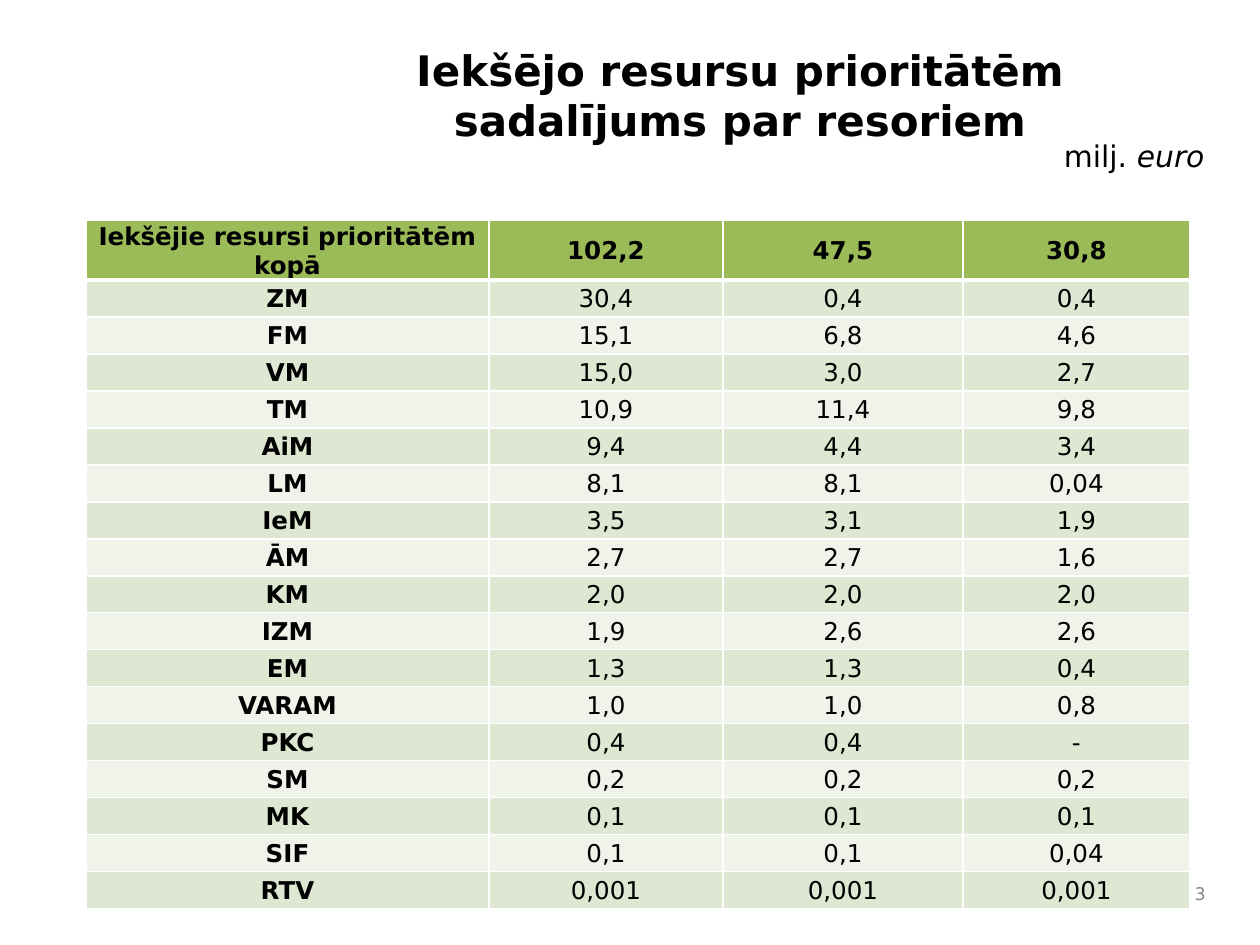
from lxml import etree
from pptx import Presentation
from pptx import util as u
from pptx.dml import color
from pptx.enum import text
from pptx.oxml import ns

PX = 914400 // 126
FONT = "DejaVu Sans"
COLUMN_WIDTHS = [403, 234, 240, 227]
HEADER_HEIGHT, ROW_HEIGHT = 49, 37
HEADER = ["Iekšējie resursi prioritātēm kopā", "102,2", "47,5", "30,8"]
MINISTRIES = [
    ["ZM", "30,4", "0,4", "0,4"],
    ["FM", "15,1", "6,8", "4,6"],
    ["VM", "15,0", "3,0", "2,7"],
    ["TM", "10,9", "11,4", "9,8"],
    ["AiM", "9,4", "4,4", "3,4"],
    ["LM", "8,1", "8,1", "0,04"],
    ["IeM", "3,5", "3,1", "1,9"],
    ["ĀM", "2,7", "2,7", "1,6"],
    ["KM", "2,0", "2,0", "2,0"],
    ["IZM", "1,9", "2,6", "2,6"],
    ["EM", "1,3", "1,3", "0,4"],
    ["VARAM", "1,0", "1,0", "0,8"],
    ["PKC", "0,4", "0,4", "-"],
    ["SM", "0,2", "0,2", "0,2"],
    ["MK", "0,1", "0,1", "0,1"],
    ["SIF", "0,1", "0,1", "0,04"],
    ["RTV", "0,001", "0,001", "0,001"],
]


def px(*lengths):
    return [length * PX for length in lengths]


def rgb(value):
    return color.RGBColor.from_string(value)


def apply(target, **values):
    for name, value in values.items():
        setattr(target, name, value)


def write(frame, runs, size, alignment, shade="000000"):
    paragraph = frame.paragraphs[0]
    paragraph.alignment = alignment
    for words, style in runs:
        run = paragraph.add_run()
        run.text = words
        apply(run.font, name=FONT, size=u.Pt(size), **style)
        run.font.color.rgb = rgb(shade)


def add_title(slide, box):
    title = slide.shapes.title
    apply(title, **dict(zip(("left", "top", "width", "height"), px(*box))))
    apply(title.text_frame, word_wrap=True, auto_size=text.MSO_AUTO_SIZE.NONE,
          vertical_anchor=text.MSO_ANCHOR.TOP)
    write(title.text_frame,
          [("Iekšējo resursu prioritātēm sadalījums par resoriem", {"bold": True})],
          24, text.PP_ALIGN.CENTER)


def add_label(slide, box, runs, size, anchor, shade="000000"):
    frame = slide.shapes.add_textbox(*px(*box)).text_frame
    apply(frame, word_wrap=True, vertical_anchor=anchor)
    write(frame, runs, size, text.PP_ALIGN.RIGHT, shade)


def add_borders(cell, widths):
    properties = cell._tc.get_or_add_tcPr()
    for position, (side, points) in enumerate(widths.items()):
        line = etree.Element(ns.qn(f"a:ln{side}"), w=str(u.Pt(points)))
        fill = etree.SubElement(line, ns.qn("a:solidFill"))
        etree.SubElement(fill, ns.qn("a:srgbClr"), val="FFFFFF")
        properties.insert(position, line)


def fill_cell(cell, words, row, column):
    header = row == 0
    apply(cell, margin_left=u.Inches(0.01), margin_right=u.Inches(0.01),
          margin_top=u.Inches(0.01), margin_bottom=0,
          vertical_anchor=text.MSO_ANCHOR.BOTTOM if header and column == 0
          else text.MSO_ANCHOR.MIDDLE)
    cell.fill.solid()
    cell.fill.fore_color.rgb = rgb(
        "9BBB59" if header else ("EFF3EA", "DEE7D1")[row % 2])
    write(cell.text_frame, [(words, {"bold": header or column == 0})],
          14, text.PP_ALIGN.CENTER)
    add_borders(cell, {"L": 1, "R": 1, "T": 3 if row == 1 else 1,
                       "B": 3 if header else 1})


def add_resource_table(slide, left, top):
    rows = [HEADER] + MINISTRIES
    heights = [HEADER_HEIGHT] + [ROW_HEIGHT] * len(MINISTRIES)
    table = slide.shapes.add_table(
        len(rows), len(COLUMN_WIDTHS),
        *px(left, top, sum(COLUMN_WIDTHS), sum(heights))).table
    for column, width in zip(table.columns, COLUMN_WIDTHS):
        column.width = width * PX
    for row, height in zip(table.rows, heights):
        row.height = height * PX
    for row, values in enumerate(rows):
        for column, words in enumerate(values):
            fill_cell(table.cell(row, column), words, row, column)


def main():
    presentation = Presentation()
    apply(presentation, slide_width=u.Inches(10), slide_height=u.Inches(7.5))
    slide = presentation.slides.add_slide(presentation.slide_layouts[5])
    add_title(slide, (320, 38, 840, 147))
    add_label(slide, (1160, 872, 58, 42), [("3", {})], 10,
              text.MSO_ANCHOR.MIDDLE, "898989")
    add_label(slide, (1004, 132, 213, 49),
              [("milj. ", {}), ("euro", {"italic": True})], 17,
              text.MSO_ANCHOR.TOP)
    add_resource_table(slide, 86, 220)
    presentation.save("out.pptx")


if __name__ == "__main__":
    main()
